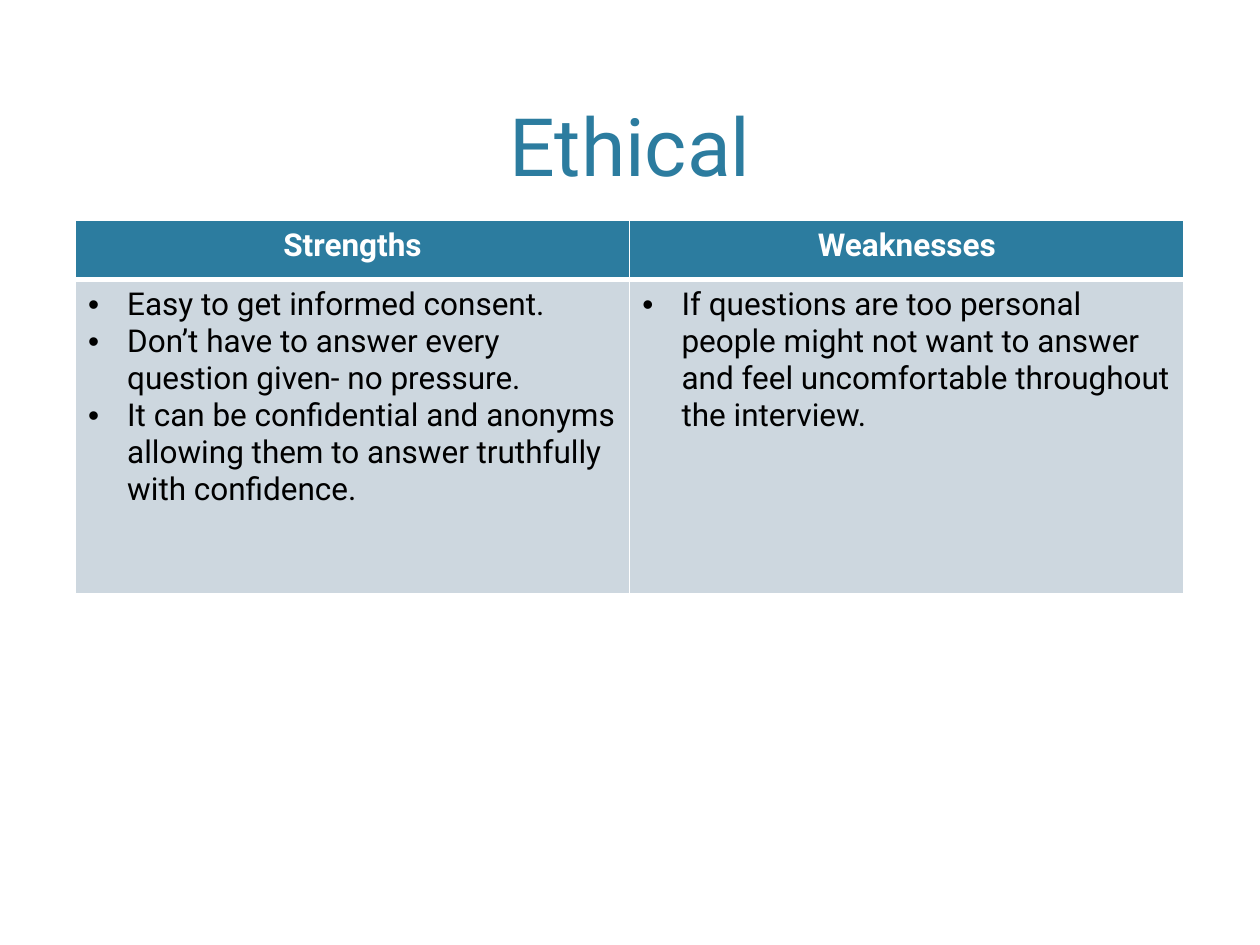
import pptx
import pptx.dml.color
import pptx.enum.text
import pptx.oxml
import pptx.oxml.ns
import pptx.util

Cm, Pt = pptx.util.Cm, pptx.util.Pt
ALIGN = pptx.enum.text.PP_ALIGN

# Content
TITLE = "Ethical"
COLUMNS = {
    "Strengths": [
        "Easy to get informed consent.",
        "Don’t have to answer every question given- no pressure.",
        "It can be confidential and anonyms allowing them to answer truthfully with confidence.",
    ],
    "Weaknesses": [
        "If questions are too personal people might not want to answer "
        "and feel uncomfortable throughout the interview.",
    ],
}

# Style and layout
COLORS = {"teal": "2C7C9F", "pale": "CDD7DF", "white": "FFFFFF", "black": "000000"}
FONT = "Roboto"
LEFT, WIDTH = Cm(1.52), Cm(22.35)
ROW_HEIGHTS = [Cm(1.19), Cm(6.32)]
INDENT = Cm(0.79)


def rgb(name):
    return pptx.dml.color.RGBColor.from_string(COLORS[name])


def style(para, size, color, bold=False, align=ALIGN.LEFT):
    para.alignment = align
    for span in para.runs:
        span.font.name = FONT
        span.font.size = Pt(size)
        span.font.bold = bold
        span.font.color.rgb = rgb(color)


def add_bullet(para):
    props = para._p.get_or_add_pPr()
    props.set("marL", str(INDENT))
    props.set("indent", str(-INDENT))
    for xml in ('<a:buFont {} typeface="Arial"/>', '<a:buChar {} char="•"/>'):
        props.append(pptx.oxml.parse_xml(xml.format(pptx.oxml.ns.nsdecls("a"))))


def set_borders(cell, widths):
    props = cell._tc.get_or_add_tcPr()
    for place, (side, width) in enumerate(widths.items()):
        props.insert(place, pptx.oxml.parse_xml(
            f'<a:ln{side} {pptx.oxml.ns.nsdecls("a")} w="{Pt(width)}"><a:solidFill>'
            f'<a:srgbClr val="{COLORS["white"]}"/></a:solidFill></a:ln{side}>'))


def fill_cell(cell, text, fill, header_edges):
    cell.text_frame.text = text
    cell.fill.solid()
    cell.fill.fore_color.rgb = rgb(fill)
    set_borders(cell, {"L": 1, "R": 1, **header_edges})


deck = pptx.Presentation()
deck.slide_width, deck.slide_height = Cm(25.4), Cm(19.05)
page = deck.slides.add_slide(deck.slide_layouts[6])

# Title
box = page.shapes.add_textbox(LEFT, Cm(0.3), WIDTH, Cm(3.71))
box.text_frame.word_wrap = True
box.text_frame.vertical_anchor = pptx.enum.text.MSO_ANCHOR.BOTTOM
box.text_frame.text = TITLE
style(box.text_frame.paragraphs[0], 46, "teal", align=ALIGN.CENTER)

# Table: one column for each heading
table = page.shapes.add_table(
    2, len(COLUMNS), LEFT, Cm(4.45), WIDTH, sum(ROW_HEIGHTS)).table
for row, height in zip(table.rows, ROW_HEIGHTS):
    row.height = height

for index, (heading, points) in enumerate(COLUMNS.items()):
    head, body = table.cell(0, index), table.cell(1, index)
    fill_cell(head, heading, "teal", {"T": 1, "B": 3})
    style(head.text_frame.paragraphs[0], 18, "white", True, ALIGN.CENTER)
    fill_cell(body, "\n".join(points), "pale", {"T": 3, "B": 1})
    for para in body.text_frame.paragraphs:
        add_bullet(para)
        style(para, 18, "black")

deck.save("out.pptx")
